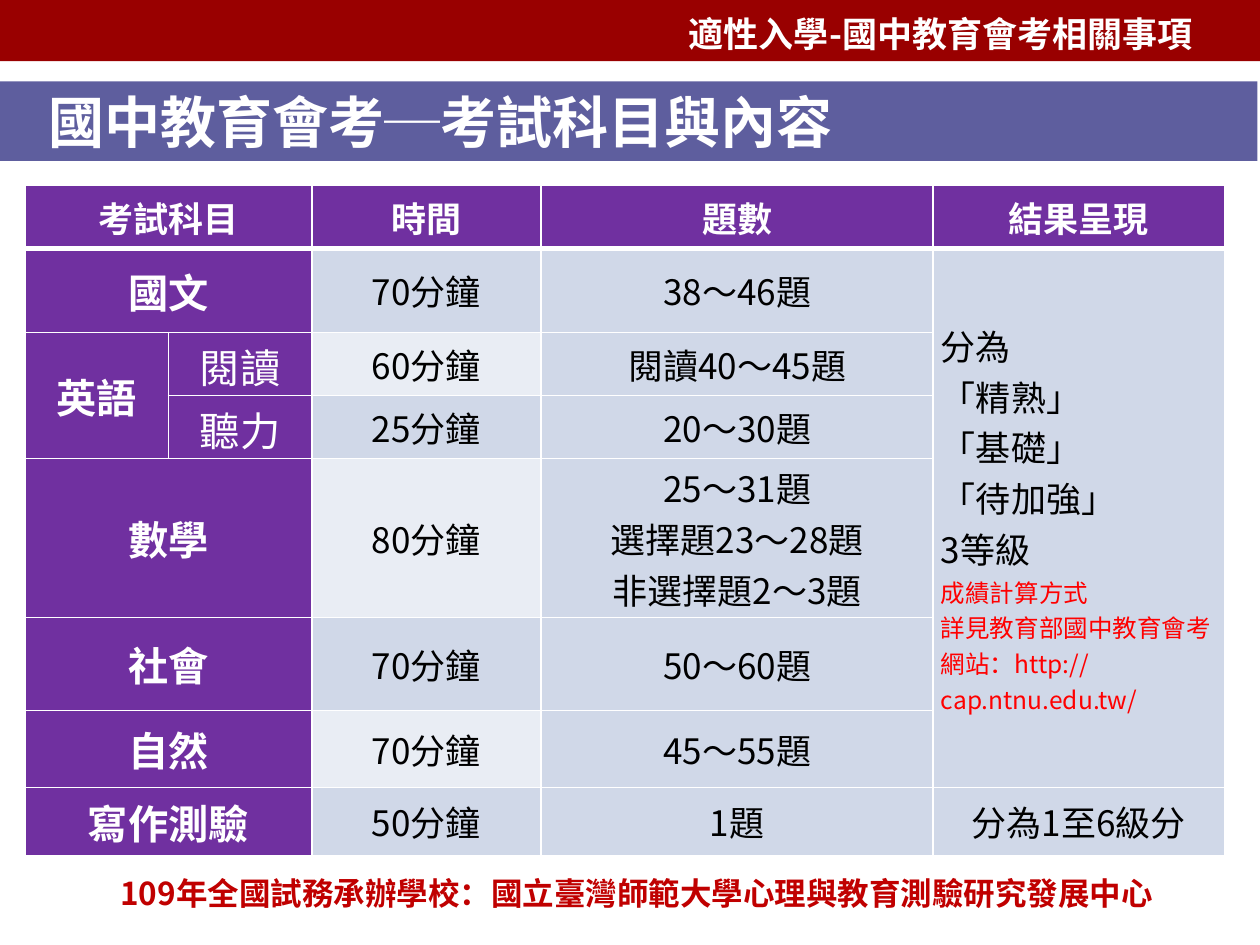
"""Builds the slide on the subjects and content of the junior high exam."""
import pptx
import pptx.dml.color
import pptx.enum.shapes
import pptx.enum.text
import pptx.oxml
import pptx.oxml.ns
import pptx.util
from lxml import etree

Pt = pptx.util.Pt
ALIGN = pptx.enum.text.PP_ALIGN
MIDDLE = pptx.enum.text.MSO_ANCHOR.MIDDLE
FONT = "Noto Sans CJK SC"
WHITE, BLACK, RED, PURPLE = "FFFFFF", "000000", "FF0000", "7030A0"
BLUE, PALE = "D0D8E8", "E9EDF4"

COLUMN_WIDTHS = [82, 82, 131, 224, 166.5]
ROW_HEIGHTS = [36, 48, 36, 36, 91, 53, 44, 39]
HEADINGS = ["考試科目", "", "時間", "題數", "結果呈現"]
EXAMS = [
    ("國文", "", "70分鐘", "38～46題"),
    ("英語", "閱讀", "60分鐘", "閱讀40～45題"),
    ("", "聽力", "25分鐘", "20～30題"),
    ("數學", "", "80分鐘", "25～31題\n選擇題23～28題\n非選擇題2～3題"),
    ("社會", "", "70分鐘", "50～60題"),
    ("自然", "", "70分鐘", "45～55題"),
    ("寫作測驗", "", "50分鐘", "1題"),
]
LEVELS = "分為\n「精熟」\n「基礎」\n「待加強」\n3等級"
SCORING = "成績計算方式\n詳見教育部國中教育會考網站：http://cap.ntnu.edu.tw/"


def rgb(value):
    """Return the colour for a hex string."""
    return pptx.dml.color.RGBColor.from_string(value)


def style(paragraph, size, color, bold=False, align=ALIGN.LEFT):
    """Format a whole paragraph, East Asian typeface included."""
    paragraph.alignment = align
    font = paragraph.font
    font.size, font.bold, font.name = Pt(size), bold, FONT
    font.color.rgb = rgb(color)
    properties = paragraph._p.pPr.find(pptx.oxml.ns.qn("a:defRPr"))
    etree.SubElement(properties, pptx.oxml.ns.qn("a:ea"), typeface=FONT)


def add_banner(slide):
    """Add the red strip across the top."""
    banner = slide.shapes.add_shape(
        pptx.enum.shapes.MSO_SHAPE.RECTANGLE, 0, 0, Pt(720), Pt(35))
    banner.shadow.inherit = False
    banner.fill.solid()
    banner.fill.fore_color.rgb = rgb("990000")
    banner.line.fill.background()


def add_label(slide, text, box, size, color, align=ALIGN.LEFT):
    """Add a bold line of text."""
    label = slide.shapes.add_textbox(*map(Pt, box))
    label.text_frame.word_wrap = True
    label.text_frame.text = text
    style(label.text_frame.paragraphs[0], size, color, True, align)


def set_title(slide, text):
    """Turn the title placeholder into a translucent band."""
    title = slide.shapes.title
    title.left, title.top, title.width, title.height = map(Pt, (-1.5, 46.5, 720, 45.5))
    title.fill.solid()
    title.fill.fore_color.rgb = rgb("000066")
    color = title.fill._xPr.find(".//" + pptx.oxml.ns.qn("a:srgbClr"))
    etree.SubElement(color, pptx.oxml.ns.qn("a:alpha"), val="63000")
    frame = title.text_frame
    frame.text = text
    frame.auto_size = pptx.enum.text.MSO_AUTO_SIZE.NONE
    frame.vertical_anchor = MIDDLE
    frame.margin_left = Pt(29)
    style(frame.paragraphs[0], 32, WHITE, True)


def set_borders(cell, top, bottom):
    """Draw white cell borders of the given top and bottom widths."""
    properties = cell._tc.get_or_add_tcPr()
    for index, (side, width) in enumerate(
            [("L", 1), ("R", 1), ("T", top), ("B", bottom)]):
        properties.insert(index, pptx.oxml.parse_xml(
            f'<a:ln{side} {pptx.oxml.ns.nsdecls("a")} w="{Pt(width)}"><a:solidFill>'
            f'<a:srgbClr val="{WHITE}"/></a:solidFill></a:ln{side}>'))


def fill_cell(cell, text, fill, size, color, bold=False, align=ALIGN.CENTER):
    """Write and format the text of a cell."""
    cell.text = text
    cell.vertical_anchor = MIDDLE
    cell.margin_left = cell.margin_right = Pt(4.5)
    cell.margin_top = cell.margin_bottom = Pt(2.25)
    cell.fill.solid()
    cell.fill.fore_color.rgb = rgb(fill)
    for paragraph in cell.text_frame.paragraphs:
        style(paragraph, size, color, bold, align)


def add_exam_table(slide):
    """Add the table of subjects, times, question counts and results."""
    table = slide.shapes.add_table(
        len(ROW_HEIGHTS), len(COLUMN_WIDTHS), Pt(14.25), Pt(106),
        Pt(sum(COLUMN_WIDTHS)), Pt(sum(ROW_HEIGHTS))).table
    table.first_row = table.horz_banding = False
    for column, width in zip(table.columns, COLUMN_WIDTHS):
        column.width = Pt(width)
    for row, height in zip(table.rows, ROW_HEIGHTS):
        row.height = Pt(height)

    for column, heading in enumerate(HEADINGS):
        fill_cell(table.cell(0, column), heading, PURPLE, 20, WHITE, True)
    for row, (subject, part, time, questions) in enumerate(EXAMS, 1):
        fill_cell(table.cell(row, 0), subject, PURPLE, 23, WHITE, True)
        fill_cell(table.cell(row, 1), part, PURPLE, 23, WHITE)
        fill_cell(table.cell(row, 2), time, BLUE if row % 2 else PALE, 20, BLACK)
        fill_cell(table.cell(row, 3), questions, BLUE, 20, BLACK)
        fill_cell(table.cell(row, 4), "", BLUE, 20, BLACK)
    for row in range(len(ROW_HEIGHTS)):
        count = table.cell(row, 3)
        count.margin_left = count.margin_right = count.margin_top = count.margin_bottom = 0
        for cell in table.rows[row].cells:
            set_borders(cell, 3 if row == 1 else 1, 3 if row == 0 else 1)

    result = table.cell(1, 4)
    fill_cell(result, LEVELS, BLUE, 20, BLACK, align=ALIGN.LEFT)
    for line in SCORING.split("\n"):
        paragraph = result.text_frame.add_paragraph()
        paragraph.text = line
        style(paragraph, 14, RED)
    fill_cell(table.cell(7, 4), "分為1至6級分", BLUE, 20, BLACK)

    for row in (0, 1, 4, 5, 6, 7):
        table.cell(row, 0).merge(table.cell(row, 1))
    table.cell(2, 0).merge(table.cell(3, 0))
    result.merge(table.cell(6, 4))


def main():
    """Build and save the slide."""
    deck = pptx.Presentation()
    deck.slide_width, deck.slide_height = Pt(720), Pt(540)
    slide = deck.slides.add_slide(deck.slide_layouts.get_by_name("Title Only"))
    add_banner(slide)
    add_label(slide, "適性入學-國中教育會考相關事項", (386.5, 3.5, 319, 31.5), 20, WHITE)
    set_title(slide, "國中教育會考─考試科目與內容")
    add_exam_table(slide)
    add_label(slide, "109年全國試務承辦學校：國立臺灣師範大學心理與教育測驗研究發展中心",
              (16, 496, 695.5, 29), 18, "C00000", ALIGN.CENTER)
    deck.save("out.pptx")


if __name__ == "__main__":
    main()
